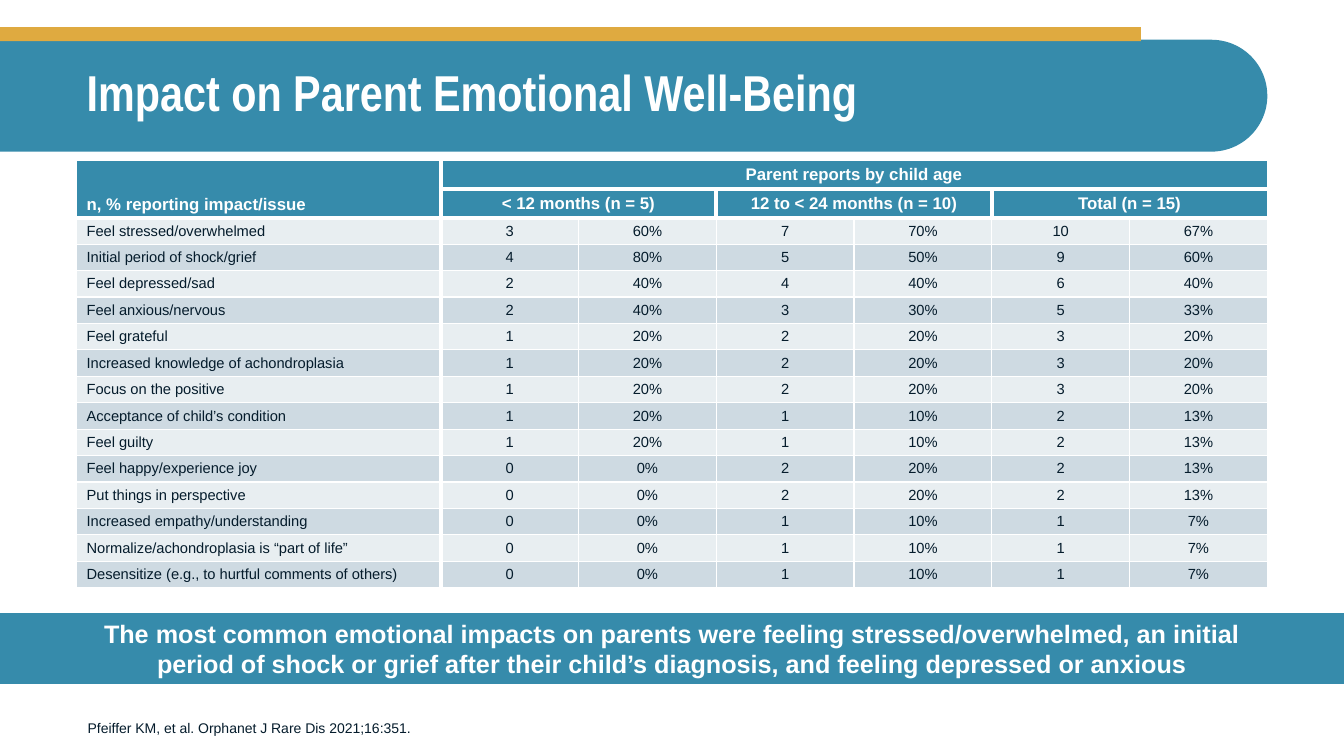
from lxml import etree
from pptx import Presentation
from pptx.dml.color import RGBColor
from pptx.enum.shapes import MSO_SHAPE
from pptx.enum.text import MSO_ANCHOR, MSO_AUTO_SIZE, PP_ALIGN
from pptx.oxml.ns import qn
from pptx.util import Inches, Pt

RECTANGLE, ROUND_ENDED = MSO_SHAPE.RECTANGLE, MSO_SHAPE.ROUND_2_SAME_RECTANGLE
BOTTOM, MIDDLE = MSO_ANCHOR.BOTTOM, MSO_ANCHOR.MIDDLE
LEFT, CENTER = PP_ALIGN.LEFT, PP_ALIGN.CENTER
NO_AUTOFIT = MSO_AUTO_SIZE.NONE

TEAL = RGBColor(0x36, 0x8B, 0xAB)
GOLD = RGBColor(0xDF, 0xAA, 0x40)
INK = RGBColor(0x05, 0x1C, 0x2C)
WHITE = RGBColor(0xFF, 0xFF, 0xFF)
LIGHT_BAND = RGBColor(0xE8, 0xEE, 0xF1)
DARK_BAND = RGBColor(0xCE, 0xDA, 0xE2)

HEADER_ROWS = 2
AGE_GROUPS = ["< 12 months (n = 5)", "12 to < 24 months (n = 10)", "Total (n = 15)"]
IMPACTS = [
    ("Feel stressed/overwhelmed", "3", "60%", "7", "70%", "10", "67%"),
    ("Initial period of shock/grief", "4", "80%", "5", "50%", "9", "60%"),
    ("Feel depressed/sad", "2", "40%", "4", "40%", "6", "40%"),
    ("Feel anxious/nervous", "2", "40%", "3", "30%", "5", "33%"),
    ("Feel grateful", "1", "20%", "2", "20%", "3", "20%"),
    ("Increased knowledge of achondroplasia", "1", "20%", "2", "20%", "3", "20%"),
    ("Focus on the positive", "1", "20%", "2", "20%", "3", "20%"),
    ("Acceptance of child’s condition", "1", "20%", "1", "10%", "2", "13%"),
    ("Feel guilty", "1", "20%", "1", "10%", "2", "13%"),
    ("Feel happy/experience joy", "0", "0%", "2", "20%", "2", "13%"),
    ("Put things in perspective", "0", "0%", "2", "20%", "2", "13%"),
    ("Increased empathy/understanding", "0", "0%", "1", "10%", "1", "7%"),
    ("Normalize/achondroplasia is “part of life”", "0", "0%", "1", "10%", "1", "7%"),
    ("Desensitize (e.g., to hurtful comments of others)", "0", "0%", "1", "10%", "1", "7%"),
]


class SlideBuilder:
    """Draws on one slide; every length is a percentage of the slide's size."""

    font = "Arial"
    title_font = "Arial Narrow"

    def __init__(self, presentation):
        self.width = presentation.slide_width
        self.height = presentation.slide_height
        self.slide = presentation.slides.add_slide(presentation.slide_layouts[1])

    def across(self, share):
        return round(self.width * share / 100)

    def down(self, share):
        return round(self.height * share / 100)

    def box(self, left, top, width, height):
        return self.across(left), self.down(top), self.across(width), self.down(height)

    def place(self, shape, *area):
        shape.left, shape.top, shape.width, shape.height = self.box(*area)

    def styled_text(self, text_frame, text, size, color, bold=False, align=LEFT, font=None):
        text_frame.text = text
        paragraph = text_frame.paragraphs[0]
        paragraph.alignment = align
        style = paragraph.runs[0].font
        style.name = font or self.font
        style.size = Pt(size)
        style.bold = bold
        style.color.rgb = color
        return paragraph

    def filled_shape(self, kind, area, color):
        shape = self.slide.shapes.add_shape(kind, *self.box(*area))
        shape.shadow.inherit = False
        shape.fill.solid()
        shape.fill.fore_color.rgb = color
        shape.line.fill.background()
        return shape

    def round_ended_banner(self, left, top, width, height, color):
        """Turn an upright shape on its side, so its round end faces right."""
        banner = self.filled_shape(ROUND_ENDED, (left, top, width, height), color)
        banner.adjustments[0], banner.adjustments[1] = 0, 0.5
        long_side, short_side = banner.width, banner.height
        banner.left += (long_side - short_side) // 2
        banner.top -= (long_side - short_side) // 2
        banner.width, banner.height = short_side, long_side
        banner.rotation = 270

    def title(self, text, *area):
        title = self.slide.shapes.title
        self.place(title, *area)
        title.text_frame.auto_size = NO_AUTOFIT
        title.text_frame.vertical_anchor = MIDDLE
        paragraph = self.styled_text(title.text_frame, text, 36, WHITE, True,
                                     font=self.title_font)
        paragraph.line_spacing = 0.9
        title.element.getparent().append(title.element)  # in front of the banner

    def key_message(self, text, *area):
        body = self.slide.placeholders[1]
        self.place(body, *area)
        body.fill.solid()
        body.fill.fore_color.rgb = TEAL
        frame = body.text_frame
        frame.auto_size = NO_AUTOFIT
        frame.vertical_anchor = MIDDLE
        frame.margin_left = frame.margin_right = Inches(0.79)
        paragraph = self.styled_text(frame, text, 18, WHITE, True, CENTER)
        paragraph.space_before = Pt(0)
        properties = paragraph._p.get_or_add_pPr()
        properties.set("marL", "0")
        properties.set("indent", "0")
        etree.SubElement(properties, qn("a:buNone"))

    def citation(self, text, *area):
        frame = self.slide.shapes.add_textbox(*self.box(*area)).text_frame
        frame.word_wrap = True
        frame.vertical_anchor = BOTTOM
        self.styled_text(frame, text, 10, INK)

    def borders(self, cell, row, column):
        """White rules: heavy around the headers and after the label column."""
        group_starts = (1, 3, 5) if row < HEADER_ROWS else (1,)
        heavy_edges = {
            "lnL": column in group_starts,
            "lnR": column + 1 in group_starts,
            "lnT": 0 < row <= HEADER_ROWS,
            "lnB": row < HEADER_ROWS,
        }
        properties = cell._tc.get_or_add_tcPr()
        for edge, heavy in heavy_edges.items():
            line = etree.SubElement(properties, qn(f"a:{edge}"), w=str(Pt(3 if heavy else 1)))
            fill = etree.SubElement(line, qn("a:solidFill"))
            etree.SubElement(fill, qn("a:srgbClr"), val=str(WHITE))

    def impact_table(self, left, top, label_width, value_width, header_height, row_height):
        blank = [""]
        grid = [["n, % reporting impact/issue", "Parent reports by child age"] + blank * 5]
        grid.append(blank + [text for group in AGE_GROUPS for text in (group, "")])
        grid.extend(IMPACTS)
        widths = [label_width] + [value_width] * 6
        heights = [header_height] * HEADER_ROWS + [row_height] * len(IMPACTS)
        area = self.box(left, top, sum(widths), sum(heights))
        table = self.slide.shapes.add_table(len(grid), len(widths), *area).table
        table.first_row = table.horz_banding = False
        for column, width in zip(table.columns, widths):
            column.width = self.across(width)
        for row, height in zip(table.rows, heights):
            row.height = self.down(height)

        for row, texts in enumerate(grid):
            header = row < HEADER_ROWS
            band = DARK_BAND if row % 2 else LIGHT_BAND
            for column, text in enumerate(texts):
                cell = table.cell(row, column)
                self.borders(cell, row, column)
                cell.fill.solid()
                cell.fill.fore_color.rgb = TEAL if header else band
                cell.margin_top = cell.margin_bottom = Inches(0.04)
                cell.vertical_anchor = BOTTOM if header and column == 0 else MIDDLE
                if text:
                    self.styled_text(cell.text_frame, text, 12 if header else 10.5,
                                     WHITE if header else INK, header,
                                     CENTER if column else LEFT)

        table.cell(0, 0).merge(table.cell(1, 0))
        table.cell(0, 1).merge(table.cell(0, 6))
        for column in (1, 3, 5):
            table.cell(1, column).merge(table.cell(1, column + 1))


def main():
    presentation = Presentation()
    presentation.slide_width = Inches(13.33)
    presentation.slide_height = Inches(7.5)
    builder = SlideBuilder(presentation)
    builder.round_ended_banner(0, 5.25, 94.3, 14.8, TEAL)
    builder.filled_shape(RECTANGLE, (0, 3.6, 84.9, 1.85), GOLD)
    builder.title("Impact on Parent Emotional Well-Being", 5.7, 5.2, 88.6, 14.7)
    builder.impact_table(5.7, 21.2, 27.1, 10.25, 3.8, 3.5)
    builder.citation("Pfeiffer KM, et al. Orphanet J Rare Dis 2021;16:351.", 5.78, 89.5, 74.1, 8.5)
    builder.key_message(
        "The most common emotional impacts on parents were feeling stressed/overwhelmed, "
        "an initial period of shock or grief after their child’s diagnosis, "
        "and feeling depressed or anxious", 0, 81.1, 100, 9.35)
    presentation.save("out.pptx")


if __name__ == "__main__":
    main()
